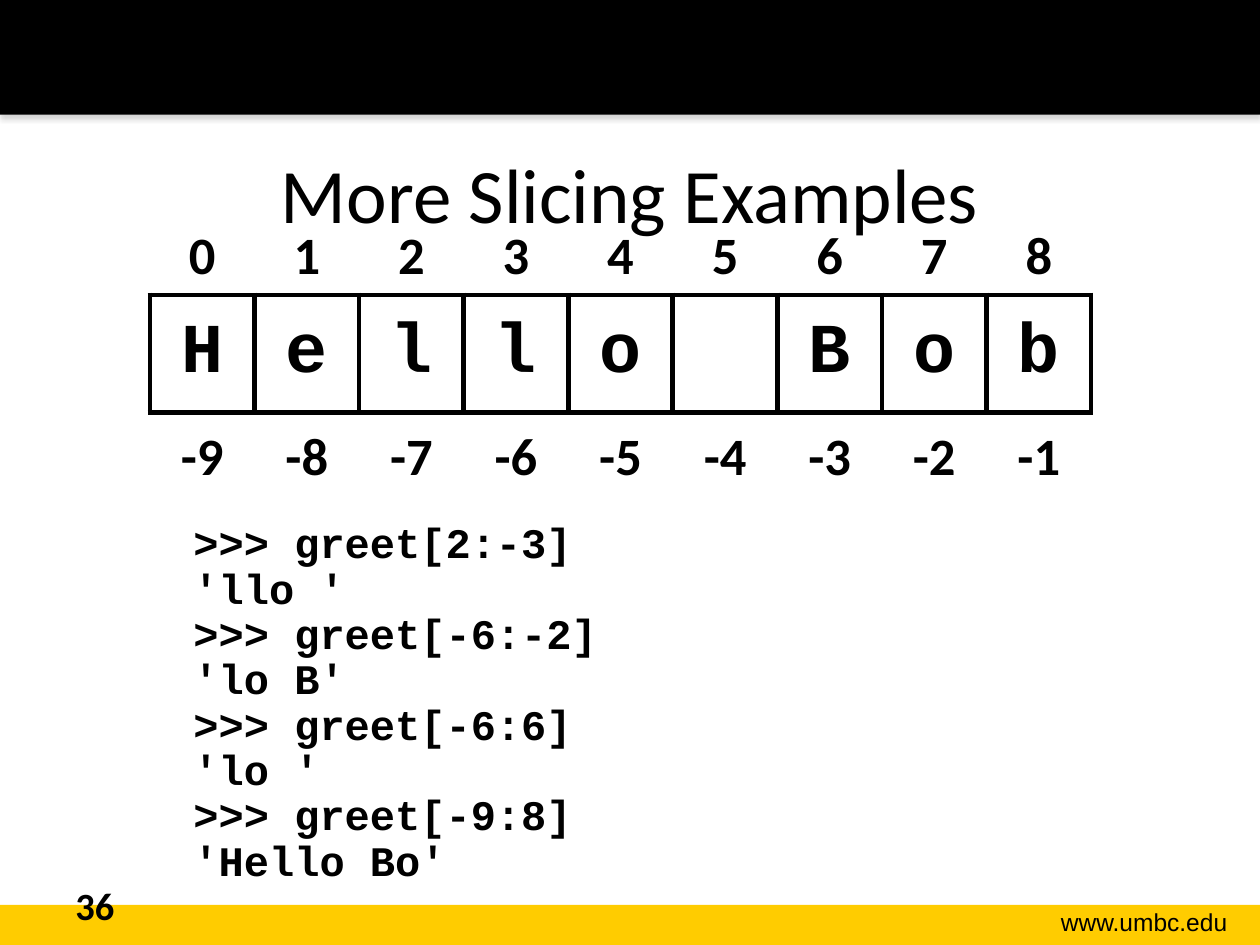
from lxml import etree
from pptx import Presentation
from pptx.dml.color import RGBColor
from pptx.enum.shapes import MSO_SHAPE
from pptx.enum.text import MSO_ANCHOR, PP_ALIGN
from pptx.oxml import parse_xml
from pptx.oxml.ns import nsdecls, qn
from pptx.util import Pt

CENTER, RIGHT = PP_ALIGN.CENTER, PP_ALIGN.RIGHT
MIDDLE, BOTTOM = MSO_ANCHOR.MIDDLE, MSO_ANCHOR.BOTTOM
BLACK, WHITE, GOLD = "000000", "FFFFFF", "FFCC00"
NO_STYLE = "{2D5ABB26-0587-4C30-8999-92F81FD0307C}"

TITLE = "More Slicing Examples"
SITE = "www.umbc.edu"
PAGE = "36"
GREETING = "Hello Bob"
EXAMPLES = [
    (">>> greet[2:-3]", "'llo '"),
    (">>> greet[-6:-2]", "'lo B'"),
    (">>> greet[-6:6]", "'lo '"),
    (">>> greet[-9:8]", "'Hello Bo'"),
]

SLIDE_W, SLIDE_H = 720, 540
GRID_LEFT, GRID_TOP, CELL_W = 85.7, 121, 59.76
INDEX_H, LETTER_H = 47.5, 67.3


def color(hex_value):
    return RGBColor.from_string(hex_value)


def style(paragraph, size, font="Calibri", bold=False, align=None):
    paragraph.font.size = Pt(size)
    paragraph.font.name = font
    paragraph.font.bold = bold
    paragraph.font.color.rgb = color(BLACK)
    paragraph.alignment = align


def add_bar(slide, top, height, fill):
    bar = slide.shapes.add_shape(MSO_SHAPE.RECTANGLE, 0, Pt(top), Pt(SLIDE_W), Pt(height))
    bar.fill.solid()
    bar.fill.fore_color.rgb = color(fill)
    bar.line.fill.background()
    bar.shadow.inherit = False
    return bar


def add_drop_shadow(bar):
    effects = bar._element.spPr.find(qn("a:effectLst"))
    effects.append(parse_xml(
        f'<a:outerShdw {nsdecls("a")} blurRad="{Pt(3.1)}" dist="{Pt(1.8)}" dir="5400000">'
        '<a:srgbClr val="808080"><a:alpha val="35000"/></a:srgbClr></a:outerShdw>'))


def add_text(slide, left, top, width, height, lines):
    box = slide.shapes.add_textbox(Pt(left), Pt(top), Pt(width), Pt(height))
    box.text_frame.word_wrap = True
    box.text_frame.text = "\n".join(lines)
    return box.text_frame.paragraphs


def add_borders(cell, sides):
    """Draw 3 pt black lines; call before the cell's fill is set."""
    for side in sides:
        line = etree.SubElement(cell._tc.get_or_add_tcPr(), qn(f"a:ln{side}"), w=str(Pt(3)))
        fill = etree.SubElement(line, qn("a:solidFill"))
        etree.SubElement(fill, qn("a:srgbClr"), val=BLACK)


def add_grid(slide, top, heights):
    count = len(GREETING)
    table = slide.shapes.add_table(len(heights), count, Pt(GRID_LEFT), Pt(top),
                                   Pt(CELL_W * count), Pt(sum(heights))).table
    table.first_row = table.horz_banding = False
    table._tbl.tblPr.find(qn("a:tableStyleId")).text = NO_STYLE
    for column in table.columns:
        column.width = Pt(CELL_W)
    for row, height in zip(table.rows, heights):
        row.height = Pt(height)
    return table


def fill_index_row(table, start, sides=""):
    for number, cell in enumerate(table.rows[0].cells, start):
        cell.text = str(number)
        cell.vertical_anchor = BOTTOM
        style(cell.text_frame.paragraphs[0], 30, bold=True, align=CENTER)
        add_borders(cell, sides)
        cell.fill.background()


def fill_letter_row(table):
    for letter, cell in zip(GREETING, table.rows[1].cells):
        cell.text = letter.strip()
        cell.vertical_anchor = MIDDLE
        style(cell.text_frame.paragraphs[0], 40, "Courier New", True, CENTER)
        add_borders(cell, "LRTB")
        cell.fill.solid()
        cell.fill.fore_color.rgb = color(WHITE)


def main():
    prs = Presentation()
    prs.slide_width, prs.slide_height = Pt(SLIDE_W), Pt(SLIDE_H)
    slide = prs.slides.add_slide(prs.slide_layouts[5])

    add_bar(slide, 517, 23, GOLD)
    add_drop_shadow(add_bar(slide, 0, 65.5, BLACK))
    style(add_text(slide, 565, 515, 143.5, 24.5, [SITE])[0], 14, "Arial", align=RIGHT)
    style(add_text(slide, 36, 500.5, 168, 29, [PAGE])[0], 22, bold=True)

    title = slide.shapes.title
    title.left, title.top, title.width, title.height = Pt(36), Pt(65), Pt(648), Pt(90)
    title.text_frame.text = TITLE
    title.text_frame.vertical_anchor = MIDDLE
    style(title.text_frame.paragraphs[0], 44, align=CENTER)

    letters = add_grid(slide, GRID_TOP, [INDEX_H, LETTER_H])
    fill_index_row(letters, 0, "B")
    fill_letter_row(letters)
    negatives = add_grid(slide, GRID_TOP + INDEX_H + LETTER_H, [INDEX_H])
    fill_index_row(negatives, -len(GREETING))

    code = [line for example in EXAMPLES for line in example]
    for paragraph in add_text(slide, 58.5, 295, 612, 219, code):
        properties = paragraph._p.get_or_add_pPr()
        properties.set("marL", str(Pt(72)))
        properties.set("indent", str(Pt(-27)))
        paragraph.line_spacing = 0.9
        style(paragraph, 24, "Courier New", True)

    prs.save("out.pptx")


if __name__ == "__main__":
    main()
